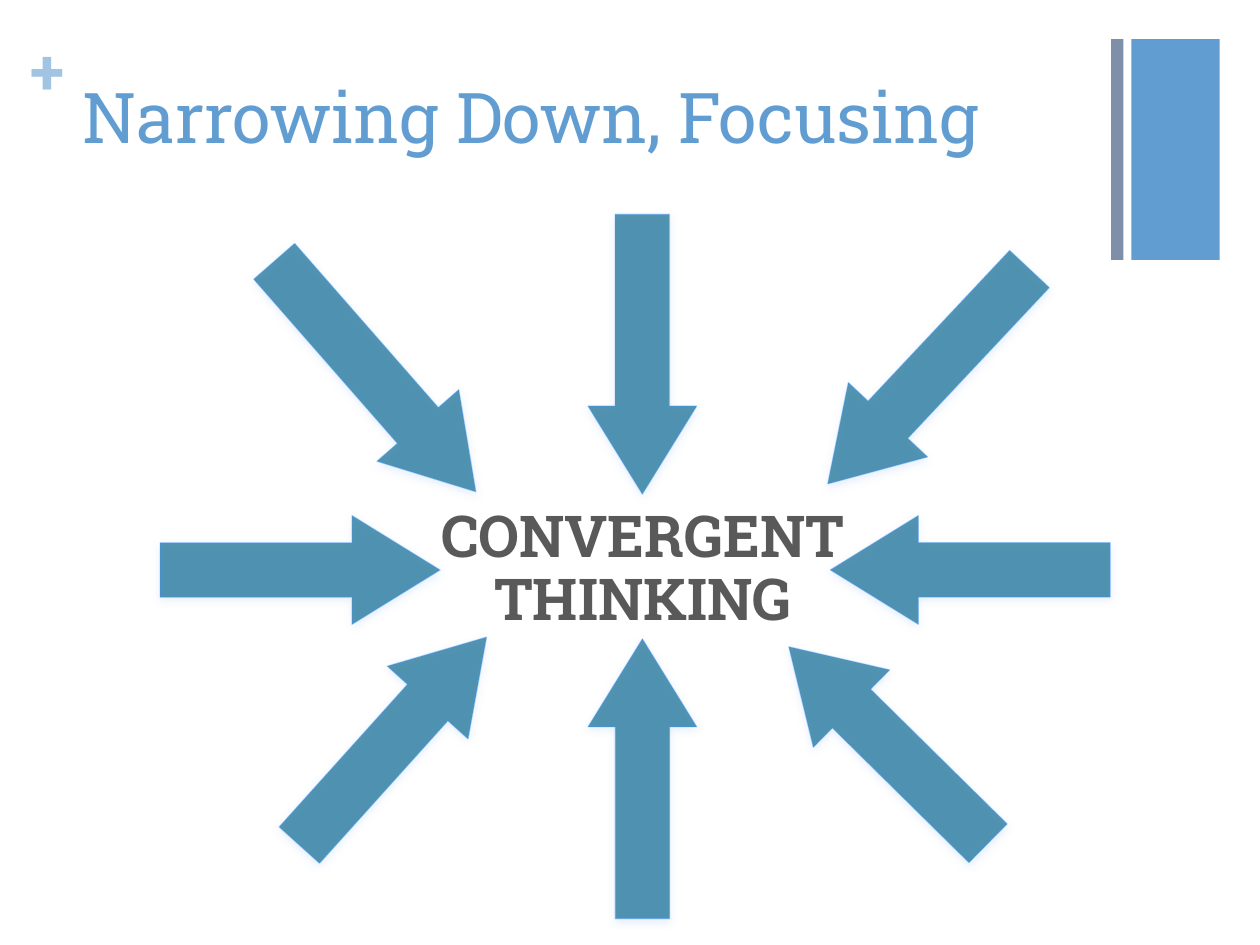
from lxml.etree import SubElement
from pptx import Presentation
from pptx.dml.color import RGBColor
from pptx.enum.shapes import MSO_SHAPE
from pptx.enum.text import MSO_ANCHOR, PP_ALIGN
from pptx.oxml.ns import qn
from pptx.util import Cm, Pt

COLORS = {
    "blue": "629DD1", "slate": "7F8FA9", "plus": "A1C4E3", "text": "595959",
    "arrow": "2C7C9F", "outline": "3A93FF", "shadow": "ACCBF9",
}
FONT = "Roboto Slab"
ARROW_LENGTH, ARROW_HEIGHT = 5.64, 2.19
ARROWS = [
    (7.56, 7.59, 228.8, 6.17),
    (6.05, 11.49, 180, ARROW_LENGTH),
    (19.56, 11.49, 0, ARROW_LENGTH),
    (12.95, 7.14, 270, ARROW_LENGTH),
    (18.72, 7.59, 313.2, 5.94),
    (7.92, 14.94, 132, ARROW_LENGTH),
    (12.95, 15.7, 90, ARROW_LENGTH),
    (17.91, 15.02, 44.6, ARROW_LENGTH),
]


def set_attrs(obj, values):
    """Set each named attribute of an object."""
    for name, value in values.items():
        setattr(obj, name, value)


def set_alpha(color_format, percent):
    """Make a solid fill partly transparent."""
    color = color_format._xPr.find(qn("a:solidFill"))[0]
    SubElement(color, qn("a:alpha"), val=str(percent * 1000))


def write(tf, lines, size, color, bold=False, paragraph=None, **frame):
    """Write formatted lines into a text frame."""
    set_attrs(tf, frame)
    for i, line in enumerate(lines):
        p = tf.add_paragraph() if i else tf.paragraphs[0]
        set_attrs(p, paragraph or {})
        r = p.add_run()
        r.text = line
        set_attrs(r.font, {"name": FONT, "size": Pt(size), "bold": bold})
        r.font.color.rgb = RGBColor.from_string(COLORS[color])


def add_bar(s, left, width, color):
    """Add one upright bar of the corner decoration."""
    sp = s.shapes.add_shape(MSO_SHAPE.RECTANGLE, Cm(left), Cm(0.79), Cm(width), Cm(4.45))
    sp.shadow.inherit = False
    sp.fill.solid()
    sp.fill.fore_color.rgb = RGBColor.from_string(COLORS[color])
    sp.line.fill.background()


def add_shadow(sp):
    """Give a shape a soft shadow below it."""
    sp.shadow.inherit = False
    effects = sp._element.spPr.find(qn("a:effectLst"))
    shadow = SubElement(effects, qn("a:outerShdw"), blurRad=str(Pt(5)),
                        dist=str(Pt(1.8)), dir="5400000", rotWithShape="0")
    color = SubElement(shadow, qn("a:srgbClr"), val=COLORS["shadow"])
    SubElement(color, qn("a:alpha"), val="35000")


def add_arrow(group, x, y, rotation, length):
    """Add an arrow centred on a point and turned towards the middle."""
    sp = group.shapes.add_shape(MSO_SHAPE.LEFT_ARROW, Cm(x - length / 2),
                                Cm(y - ARROW_HEIGHT / 2), Cm(length), Cm(ARROW_HEIGHT))
    sp.rotation = rotation
    sp.adjustments[0], sp.adjustments[1] = 0.5, 0.81
    sp.line.width = Pt(0.75)
    for fill, color, alpha in ((sp.fill, "arrow", 81), (sp.line.fill, "outline", 34)):
        fill.solid()
        fill.fore_color.rgb = RGBColor.from_string(COLORS[color])
        set_alpha(fill, alpha)
    add_shadow(sp)


def add_title(s, text):
    """Place and fill the title placeholder."""
    sp = s.shapes.title
    set_attrs(sp, {"left": Cm(1.4), "top": Cm(1.35), "width": Cm(20.98), "height": Cm(3.1)})
    write(sp.text_frame, [text], 40, "blue", paragraph={"alignment": PP_ALIGN.LEFT},
          vertical_anchor=MSO_ANCHOR.TOP, word_wrap=True)


def main():
    """Build the slide and save it."""
    prs = Presentation()
    set_attrs(prs, {"slide_width": Cm(25.4), "slide_height": Cm(19.05)})
    s = prs.slides.add_slide(prs.slide_layouts[5])
    add_bar(s, 22.81, 1.78, "blue")
    add_bar(s, 22.4, 0.25, "slate")
    plus = s.shapes.add_textbox(Cm(0.61), Cm(0.64), Cm(0.74), Cm(1.55))
    write(plus.text_frame, ["+"], 36, "plus", bold=True, word_wrap=False,
          margin_left=0, margin_right=0, margin_top=0, margin_bottom=0)
    add_title(s, "Narrowing Down, Focusing")
    group = s.shapes.add_group_shape()
    for arrow in ARROWS:
        add_arrow(group, *arrow)
    center = group.shapes.add_textbox(Cm(7.98), Cm(9.37), Cm(9.96), Cm(3.51))
    write(center.text_frame, ["CONVERGENT", "THINKING"], 33, "text", bold=True,
          paragraph={"alignment": PP_ALIGN.CENTER, "line_spacing": 0.9},
          vertical_anchor=MSO_ANCHOR.BOTTOM, word_wrap=True)
    prs.save("out.pptx")


if __name__ == "__main__":
    main()
